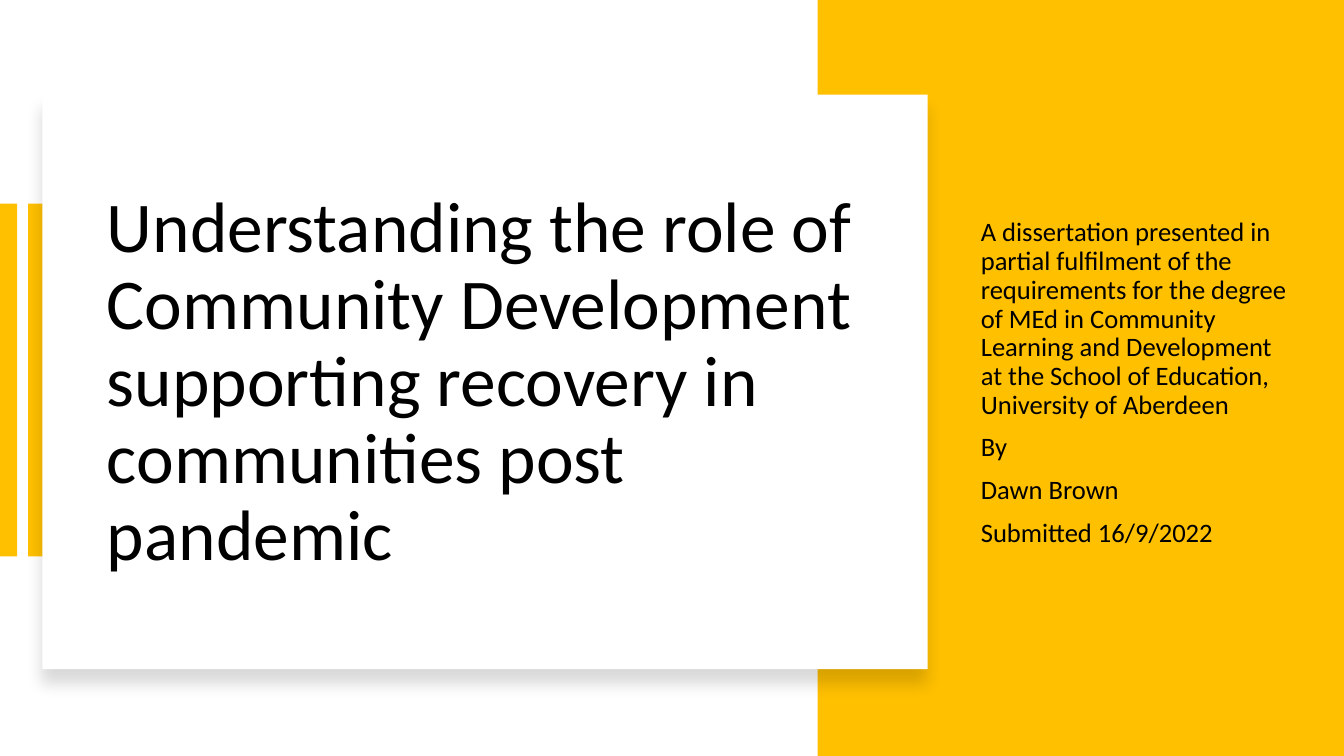
from lxml.etree import SubElement
from pptx import Presentation
from pptx.dml.color import RGBColor
from pptx.enum.shapes import MSO_SHAPE
from pptx.enum.text import MSO_ANCHOR, MSO_AUTO_SIZE, PP_ALIGN
from pptx.oxml.ns import qn
from pptx.util import Inches, Pt

GOLD = "FFC000"
WHITE = "FFFFFF"
BLACK = "000000"


def add_block(left, top, width, height, color):
    block = page.shapes.add_shape(
        MSO_SHAPE.RECTANGLE, Inches(left), Inches(top), Inches(width), Inches(height)
    )
    block.shadow.inherit = False
    block.fill.solid()
    block.fill.fore_color.rgb = RGBColor.from_string(color)
    block.line.fill.background()
    return block


def format_text(box, size, space_before):
    frame = box.text_frame
    frame.word_wrap = True
    frame.auto_size = MSO_AUTO_SIZE.NONE
    frame.vertical_anchor = MSO_ANCHOR.MIDDLE
    for para in frame.paragraphs:
        para.alignment = PP_ALIGN.LEFT
        para.line_spacing = 0.9
        para.space_before = Pt(space_before)
        for span in para.runs:
            span.font.name = "Calibri"
            span.font.size = Pt(size)
            span.font.color.rgb = RGBColor.from_string(BLACK)


deck = Presentation()
deck.slide_width = Inches(13.33)
deck.slide_height = Inches(7.5)
page = deck.slides.add_slide(deck.slide_layouts[5])

for bar_left in (0, 0.28):
    add_block(bar_left, 2.02, 0.17, 3.5, GOLD)
add_block(8.11, 0, 5.22, 7.5, GOLD)
card = add_block(0.42, 0.94, 8.78, 5.7, WHITE)

effects = card.element.spPr.find(qn("a:effectLst"))
shadow = SubElement(
    effects, qn("a:outerShdw"),
    blurRad=str(Pt(11)), dist=str(Pt(10)), dir="5400000", algn="t", rotWithShape="0",
)
shadow_color = SubElement(shadow, qn("a:srgbClr"), val=BLACK)
SubElement(shadow_color, qn("a:alpha"), val="15000")

title = page.shapes.title
title.left, title.top = Inches(0.96), Inches(1.61)
title.width, title.height = Inches(7.77), Inches(4.39)
title.text_frame.text = (
    "Understanding the role of Community Development "
    "supporting recovery in communities post pandemic"
)
format_text(title, 51, 0)
card.element.addnext(title.element)

subtitle = page.shapes.add_textbox(Inches(9.63), Inches(2.02), Inches(3.28), Inches(3.57))
subtitle.text_frame.text = "\n".join([
    "A dissertation presented in partial fulfilment of the requirements for the degree "
    "of MEd in Community Learning and Development at the School of Education, "
    "University of Aberdeen",
    "By",
    "Dawn Brown",
    "Submitted 16/9/2022",
])
format_text(subtitle, 19, 10)

deck.save("out.pptx")
